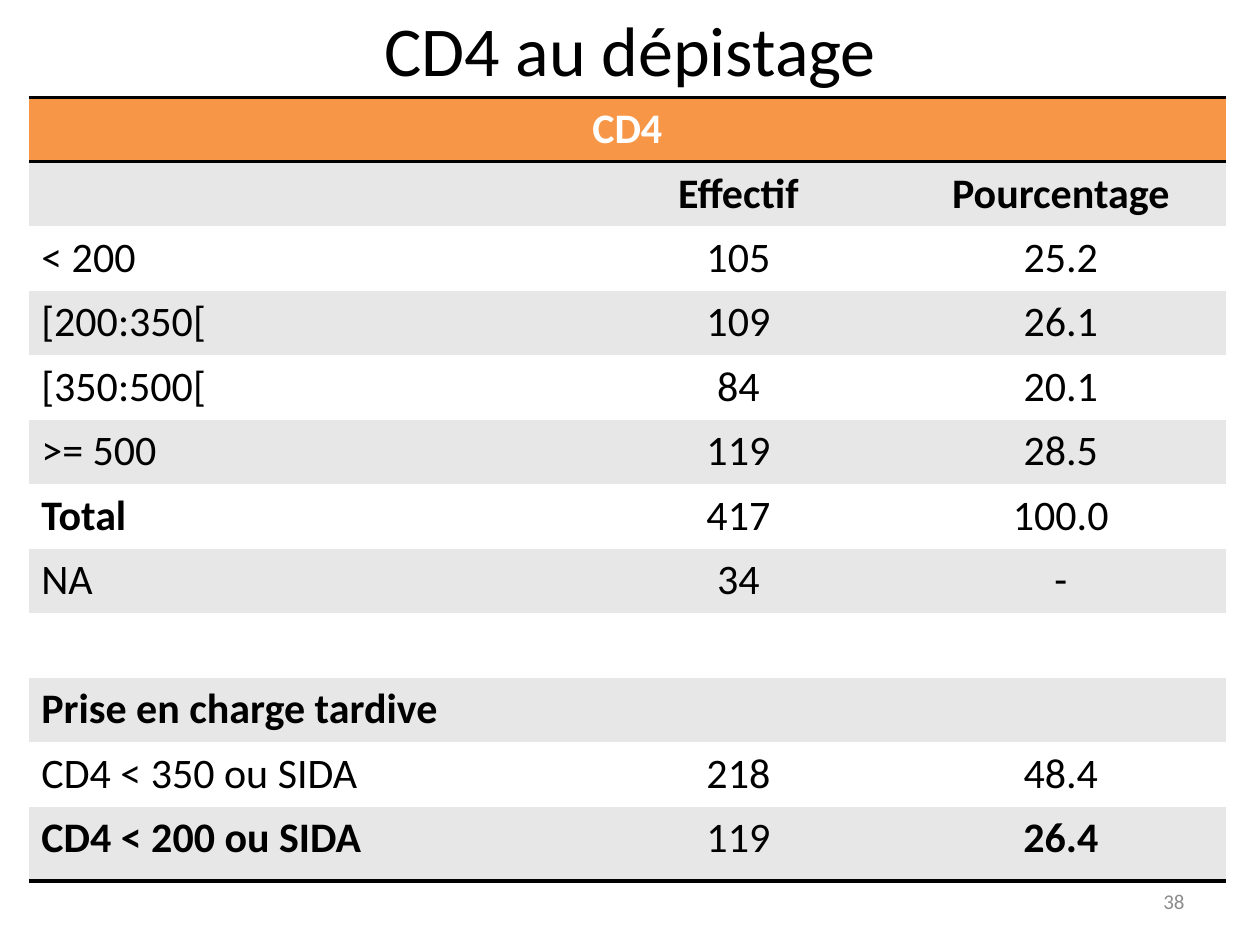
"""Build the slide on CD4 counts at screening."""
import pptx
import pptx.util
import pptx.dml.color
import pptx.enum.text
import pptx.oxml
import pptx.oxml.ns

Cm, Pt = pptx.util.Cm, pptx.util.Pt
RGBColor = pptx.dml.color.RGBColor
PP_ALIGN = pptx.enum.text.PP_ALIGN
MSO_ANCHOR = pptx.enum.text.MSO_ANCHOR

BLACK = RGBColor(0x00, 0x00, 0x00)
WHITE = RGBColor(0xFF, 0xFF, 0xFF)
ORANGE = RGBColor(0xF7, 0x96, 0x46)
BAND = RGBColor(0xE7, 0xE7, 0xE7)
GREY = RGBColor(0x8C, 0x8C, 0x8C)
FONT = "Calibri"
NO_STYLE = "{2D5ABB26-0587-4C30-8999-92F81FD0307C}"

ROWS = [
    ("CD4", "", ""),
    ("", "Effectif", "Pourcentage"),
    ("< 200", "105", "25.2"),
    ("[200:350[", "109", "26.1"),
    ("[350:500[", "84", "20.1"),
    (">= 500", "119", "28.5"),
    ("Total", "417", "100.0"),
    ("NA", "34", "-"),
    ("", "", ""),
    ("Prise en charge tardive", "", ""),
    ("CD4 < 350 ou SIDA", "218", "48.4"),
    ("CD4 < 200 ou SIDA", "119", "26.4"),
]
BOLD = {"CD4", "Effectif", "Pourcentage", "Total", "Prise en charge tardive",
        "CD4 < 200 ou SIDA", "26.4"}
COL_WIDTHS = (11.13, 6.35, 6.65)
ROW_HEIGHT, LAST_HEIGHT = 1.3, 1.5


def add_run(tf, text, size, color, align, bold=False):
    p = tf.paragraphs[0]
    p.alignment = align
    r = p.add_run()
    r.text = text
    r.font.name = FONT
    r.font.size = Pt(size)
    r.font.bold = bold
    r.font.color.rgb = color


def add_borders(cell, *sides):
    tcPr = cell._tc.get_or_add_tcPr()
    for i, side in enumerate(sides):
        tcPr.insert(i, pptx.oxml.parse_xml(
            f'<a:{side} {pptx.oxml.ns.nsdecls("a")} w="{Pt(2)}"><a:solidFill>'
            f'<a:srgbClr val="{BLACK}"/></a:solidFill></a:{side}>'))


def add_title(s, text):
    sp = s.shapes.title
    sp.left, sp.top, sp.width, sp.height = Cm(0), Cm(0), Cm(25.4), Cm(1.96)
    tf = sp.text_frame
    tf.vertical_anchor = MSO_ANCHOR.TOP
    tf.auto_size = pptx.enum.text.MSO_AUTO_SIZE.SHAPE_TO_FIT_TEXT
    add_run(tf, text, 40, BLACK, PP_ALIGN.CENTER)


def add_page_number(s, text):
    tf = s.shapes.add_textbox(Cm(18.2), Cm(17.65), Cm(5.93), Cm(1.02)).text_frame
    tf.word_wrap = True
    tf.vertical_anchor = MSO_ANCHOR.MIDDLE
    add_run(tf, text, 12, GREY, PP_ALIGN.RIGHT)


def fill_cell(cell, text, row, col):
    header = row == 0
    cell.fill.solid()
    cell.fill.fore_color.rgb = ORANGE if header else BAND if row % 2 else WHITE
    cell.vertical_anchor = MSO_ANCHOR.MIDDLE if row < 2 else MSO_ANCHOR.TOP
    if text:
        align = PP_ALIGN.CENTER if header or col else PP_ALIGN.LEFT
        add_run(cell.text_frame, text, 24, WHITE if header else BLACK, align, text in BOLD)
    if header:
        add_borders(cell, "lnT", "lnB")
    elif row == len(ROWS) - 1:
        add_borders(cell, "lnB")


def add_cd4_table(s):
    heights = [ROW_HEIGHT] * (len(ROWS) - 1) + [LAST_HEIGHT]
    table = s.shapes.add_table(len(ROWS), len(COL_WIDTHS), Cm(0.58), Cm(1.96),
                               Cm(sum(COL_WIDTHS)), Cm(sum(heights))).table
    table.first_row = table.horz_banding = False
    table._tbl.tblPr.find(pptx.oxml.ns.qn("a:tableStyleId")).text = NO_STYLE
    for column, width in zip(table.columns, COL_WIDTHS):
        column.width = Cm(width)
    for i, (texts, height) in enumerate(zip(ROWS, heights)):
        table.rows[i].height = Cm(height)
        for j, text in enumerate(texts):
            fill_cell(table.cell(i, j), text, i, j)
    table.cell(0, 0).merge(table.cell(0, len(COL_WIDTHS) - 1))


def main():
    prs = pptx.Presentation()
    prs.slide_width, prs.slide_height = Cm(25.4), Cm(19.05)
    s = prs.slides.add_slide(prs.slide_layouts[5])
    add_page_number(s, "38")
    add_title(s, "CD4 au dépistage")
    add_cd4_table(s)
    prs.save("out.pptx")


if __name__ == "__main__":
    main()
